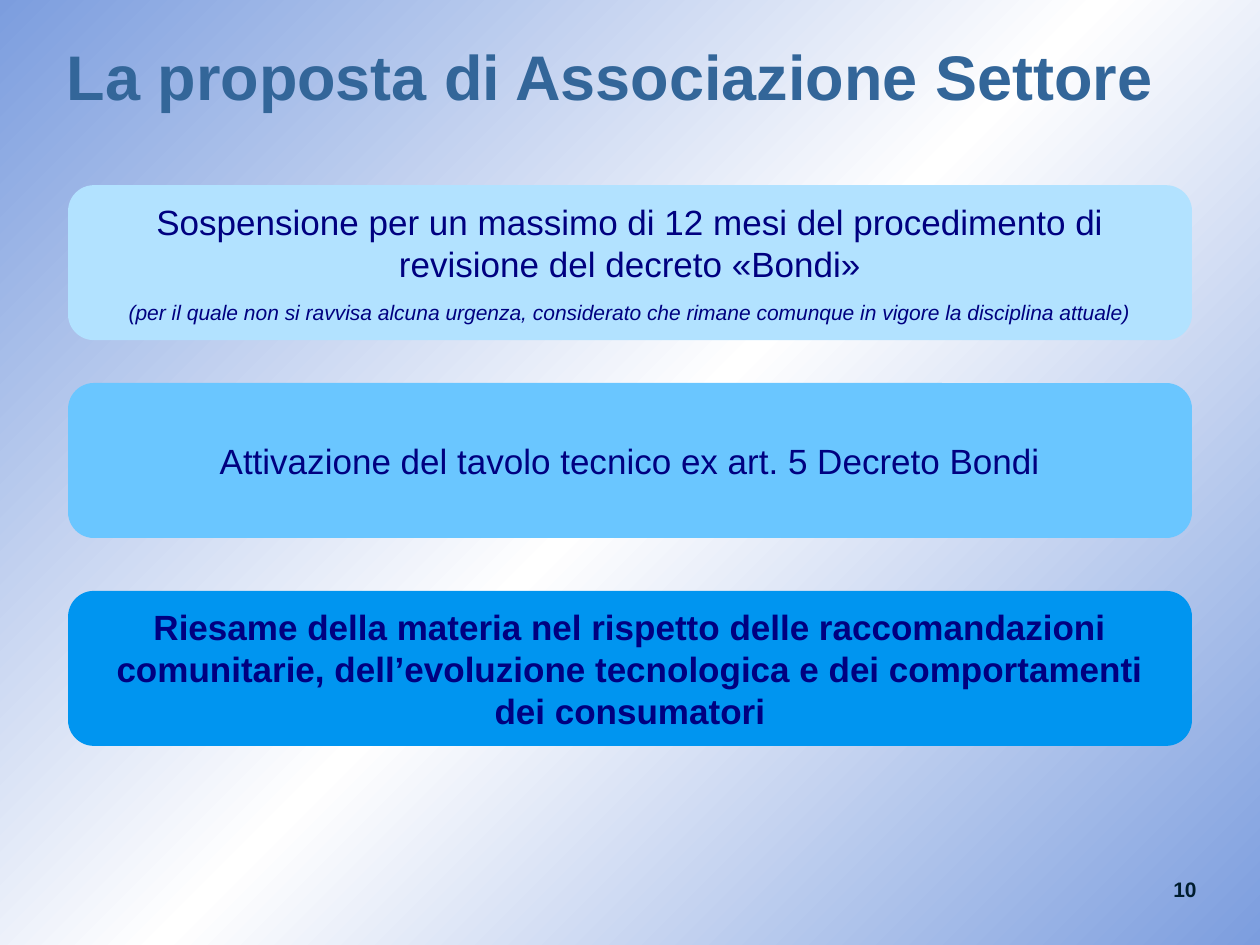
from copy import deepcopy

from pptx import Presentation
from pptx.dml.color import RGBColor
from pptx.enum.shapes import MSO_SHAPE
from pptx.enum.text import MSO_ANCHOR, MSO_AUTO_SIZE, PP_ALIGN
from pptx.util import Inches, Pt


def rgb(value):
    return RGBColor.from_string(value)


class SlideBuilder:
    """Holds the style and the current slide, and adds each kind of element."""

    font = "Arial"
    ink = "000080"

    def __init__(self, prs):
        self.s = prs.slides.add_slide(prs.slide_layouts[5])

    def background(self, *colors):
        fill = self.s.background.fill
        fill.gradient()
        fill.gradient_angle = 315
        gs_list = fill._fill._gradFill.gsLst
        while len(gs_list) < len(colors):
            gs_list.append(deepcopy(gs_list[-1]))
        for i, (stop, color) in enumerate(zip(fill.gradient_stops, colors)):
            stop.position = i / (len(colors) - 1)
            stop.color.rgb = rgb(color)

    def format(self, p, size, color, bold=False, italic=False, align=PP_ALIGN.CENTER):
        p.alignment = align
        for r in p.runs:
            r.font.name = self.font
            r.font.size = Pt(size)
            r.font.bold = bold
            r.font.italic = italic
            r.font.color.rgb = rgb(color)

    def title(self, text):
        sp = self.s.shapes.title
        sp.left, sp.top, sp.width, sp.height = (Inches(v) for v in (0.43, 0.15, 9.37, 1))
        tf = sp.text_frame
        tf.text = text
        tf.auto_size = MSO_AUTO_SIZE.NONE
        tf.vertical_anchor = MSO_ANCHOR.MIDDLE
        p = tf.paragraphs[0]
        p.line_spacing = 0.8
        self.format(p, 36, "336699", bold=True, align=PP_ALIGN.LEFT)

    def box(self, top, fill, text, note=None, bold=False):
        sp = self.s.shapes.add_shape(
            MSO_SHAPE.ROUNDED_RECTANGLE, Inches(0.54), Inches(top), Inches(8.92), Inches(1.23))
        sp.shadow.inherit = False
        sp.fill.solid()
        sp.fill.fore_color.rgb = rgb(fill)
        sp.line.fill.background()
        tf = sp.text_frame
        tf.word_wrap = True
        tf.vertical_anchor = MSO_ANCHOR.MIDDLE
        tf.text = text
        self.format(tf.paragraphs[0], 20, self.ink, bold=bold)
        if note:
            p = tf.add_paragraph()
            p.text = note
            p.space_before = Pt(9)
            self.format(p, 12, self.ink, italic=True)

    def page_number(self, number):
        sp = self.s.shapes.add_textbox(Inches(9.17), Inches(6.91), Inches(0.47), Inches(0.3))
        tf = sp.text_frame
        tf.word_wrap = True
        tf.text = str(number)
        self.format(tf.paragraphs[0], 12, "001D2E", bold=True)


def main():
    prs = Presentation()
    prs.slide_width, prs.slide_height = Inches(10), Inches(7.5)
    slide = SlideBuilder(prs)
    slide.background("7C9DDE", "FFFFFF", "7C9DDE")
    slide.title("La proposta di Associazione Settore")
    slide.box(
        1.47, "B2E2FF",
        "Sospensione per un massimo di 12 mesi del procedimento di revisione del decreto «Bondi»",
        note="(per il quale non si ravvisa alcuna urgenza, considerato che rimane comunque "
             "in vigore la disciplina attuale)")
    slide.box(3.04, "6AC6FF", "Attivazione del tavolo tecnico ex art. 5 Decreto Bondi")
    slide.box(
        4.69, "0095F0",
        "Riesame della materia nel rispetto delle raccomandazioni comunitarie, "
        "dell’evoluzione tecnologica e dei comportamenti dei consumatori",
        bold=True)
    slide.page_number(10)
    prs.save("out.pptx")


if __name__ == "__main__":
    main()
